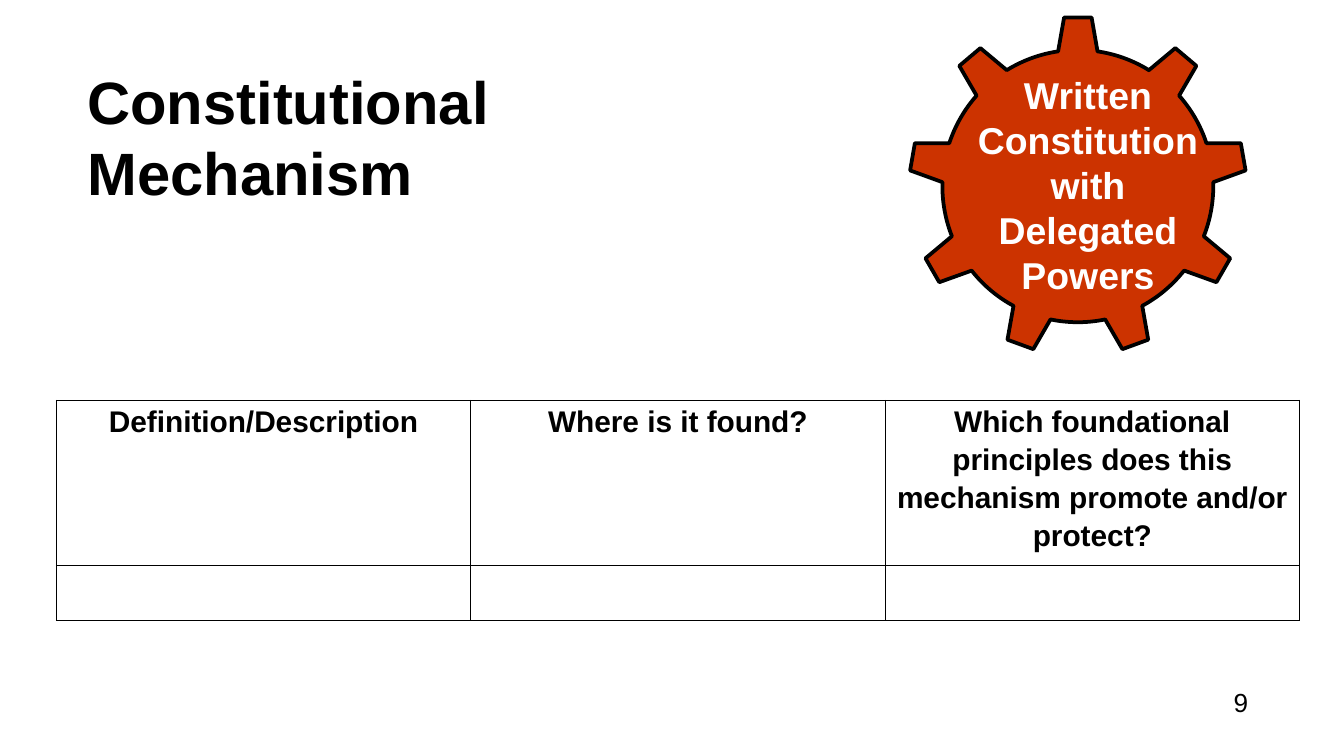
"""Build the Constitutional Mechanism worksheet slide."""
from lxml import etree
from pptx import Presentation
from pptx import util as u
from pptx.dml import color
from pptx.enum import shapes, text
from pptx.oxml import ns

COLORS = {"ink": "000000", "gear": "CC3300", "light": "FFFFFF"}
HEADINGS = [
    "Definition/Description",
    "Where is it found?",
    "Which foundational principles does this mechanism promote and/or protect?",
]


def rgb(name):
    return color.RGBColor.from_string(COLORS[name])


def write(frame, wording, size, ink="ink", bold=True, **paragraph_format):
    frame.word_wrap = True
    para = frame.paragraphs[0]
    for name, value in paragraph_format.items():
        setattr(para, name, value)
    span = para.add_run()
    span.text = wording
    for name, value in {"name": "Arial", "size": u.Pt(size), "bold": bold}.items():
        setattr(span.font, name, value)
    span.font.color.rgb = rgb(ink)


deck = Presentation()
deck.slide_width, deck.slide_height = u.Inches(10), u.Inches(10 * 9 / 16)
page = deck.slides.add_slide(deck.slide_layouts[5])

title = page.shapes.title
title_format = {"left": 0.55, "top": 0.43, "width": 4.92, "height": 1.18}
for name, value in title_format.items():
    setattr(title, name, u.Inches(value))
title.text_frame.auto_size = text.MSO_AUTO_SIZE.NONE
title.text_frame.vertical_anchor = text.MSO_ANCHOR.TOP
write(title.text_frame, "Constitutional Mechanism", 32, alignment=text.PP_ALIGN.LEFT)

gear = page.shapes.add_shape(
    shapes.MSO_SHAPE.GEAR_9, u.Inches(6.76), u.Inches(0.12), u.Inches(2.52), u.Inches(2.53)
)
gear.shadow.inherit = False
gear.fill.solid()
gear.fill.fore_color.rgb = rgb("gear")
gear.line.color.rgb = rgb("ink")
gear.line.width = u.Pt(2)

labels = [
    ((7.17, 0.49, 1.85, 1.78), "Written Constitution with Delegated Powers", 20, "light", True, text.PP_ALIGN.CENTER),
    ((9.08, 5.06, 0.58, 0.34), "9", 14, "ink", False, text.PP_ALIGN.LEFT),
]
for place, wording, size, ink, bold, alignment in labels:
    box = page.shapes.add_textbox(*map(u.Inches, place))
    write(box.text_frame, wording, size, ink, bold, alignment=alignment)

table = page.shapes.add_table(
    2, 3, u.Inches(0.42), u.Inches(2.98), u.Inches(9.25), u.Inches(1.63)
).table
table.first_row = table.horz_banding = False
for column in table.columns:
    column.width = u.Inches(9.25 / 3)
for row, height in zip(table.rows, (1.22, 0.41)):
    row.height = u.Inches(height)

for cell in table.iter_cells():
    properties = cell._tc.get_or_add_tcPr()
    for side in ("lnL", "lnR", "lnT", "lnB"):
        border = etree.SubElement(properties, ns.qn(f"a:{side}"), w=str(u.Pt(0.75)))
        fill = etree.SubElement(border, ns.qn("a:solidFill"))
        etree.SubElement(fill, ns.qn("a:srgbClr"), val=COLORS["ink"])
    cell.fill.background()

cell_format = {
    "margin_left": u.Inches(0.07),
    "margin_right": u.Inches(0.07),
    "margin_top": 0,
    "margin_bottom": 0,
}
for cell, heading in zip(table.rows[0].cells, HEADINGS):
    for name, value in cell_format.items():
        setattr(cell, name, value)
    write(
        cell.text_frame, heading, 16,
        alignment=text.PP_ALIGN.CENTER, line_spacing=1.15, space_after=u.Pt(5),
    )

deck.save("out.pptx")
